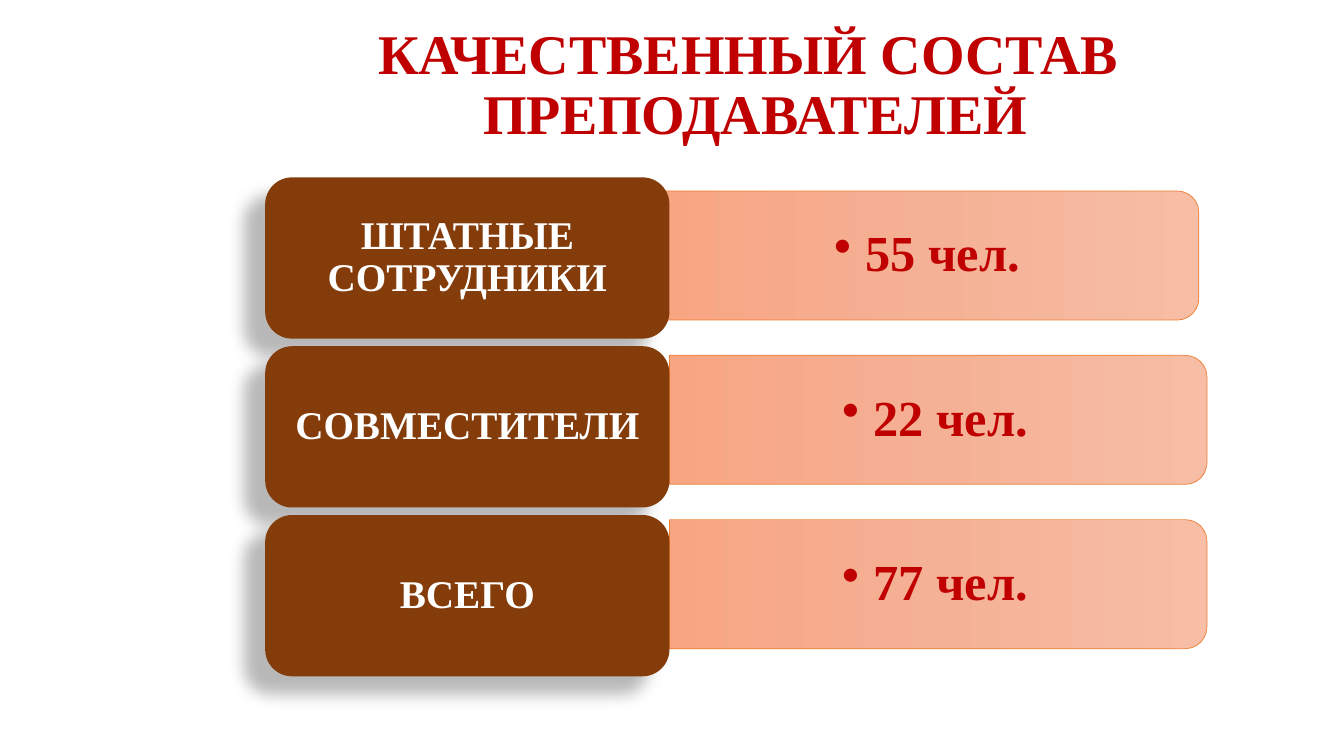
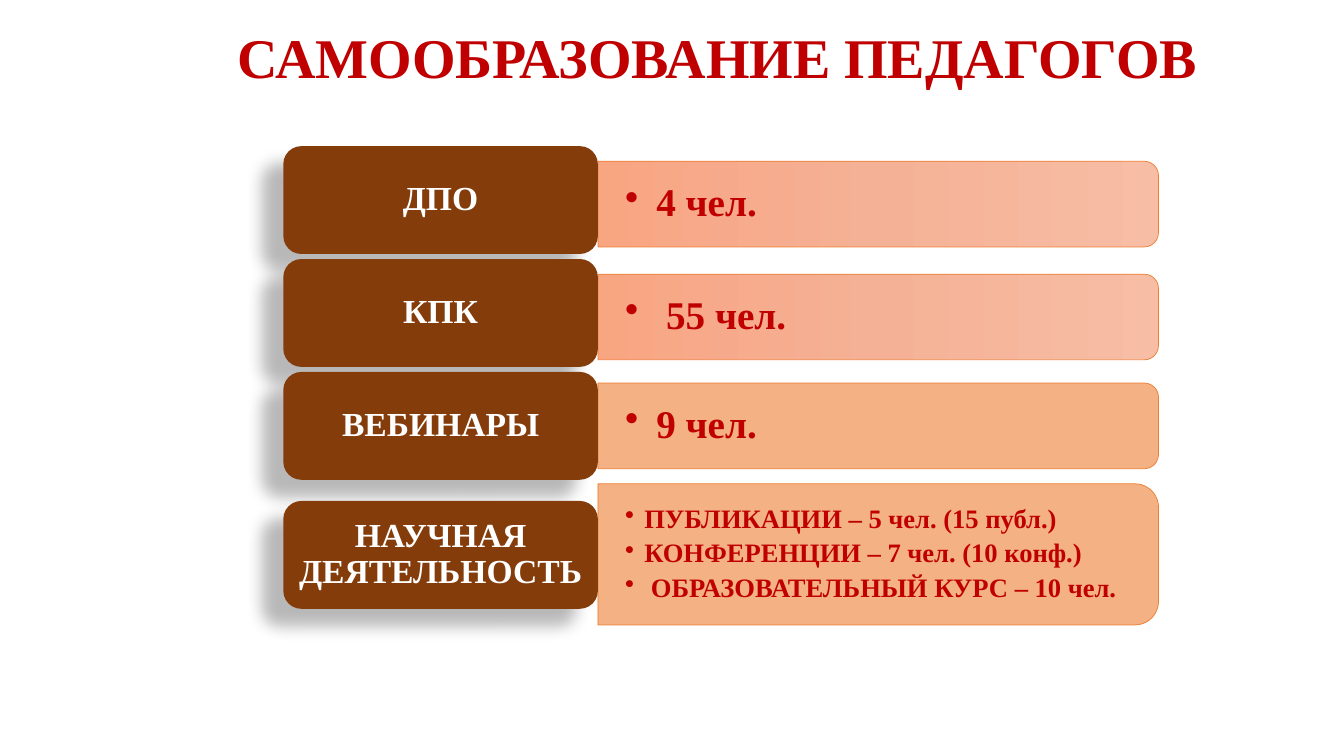
from dataclasses import dataclass

from lxml import etree
from pptx import Presentation
from pptx.dml.color import RGBColor
from pptx.enum.shapes import MSO_SHAPE
from pptx.enum.text import MSO_ANCHOR, MSO_AUTO_SIZE, PP_ALIGN
from pptx.oxml.ns import qn
from pptx.util import Inches, Pt

LEFT, CENTER = PP_ALIGN.LEFT, PP_ALIGN.CENTER
MIDDLE = MSO_ANCHOR.MIDDLE
NO_AUTOFIT = MSO_AUTO_SIZE.NONE
LABEL_SHAPE = MSO_SHAPE.ROUNDED_RECTANGLE
BAR_SHAPE = MSO_SHAPE.ROUND_2_SAME_RECTANGLE
TITLE_ONLY = 5


@dataclass(frozen=True)
class Theme:
    font: str = "Times New Roman"
    accent: str = "C00000"
    label: str = "843C0B"
    label_text: str = "FFFFFF"
    bar: str = "F4B183"
    bar_line: str = "ED7D31"
    bar_gradient: tuple = ((0, "F7BDA5"), (50, "F5B196"), (100, "F8A582"))
    title_size: int = 40
    line_spacing: float = 0.9
    bullet_gap: float = 4


THEME = Theme()

SLIDES = [
    {
        "title": "КАЧЕСТВЕННЫЙ СОСТАВ \vПРЕПОДАВАТЕЛЕЙ",
        "title_box": (1.49, 0.23, 12, 1.25),
        "title_align": CENTER,
        "label_box": (2.63, 4.01, 1.6),
        "label_size": 28,
        "bar_width": 5.33,
        "bar_align": CENTER,
        "rows": [
            {"label": "ШТАТНЫЕ СОТРУДНИКИ", "lines": ["55 чел."], "overlap": 0.08},
            {"label": "СОВМЕСТИТЕЛИ", "lines": ["22 чел."]},
            {"label": "ВСЕГО", "lines": ["77 чел."]},
        ],
        "row_defaults": {"size": 36, "indent": 0.31, "height": 1.28, "gradient": True, "overlap": 0},
        "label_tops": [1.76 + 1.675 * row for row in range(3)],
        "bar_tops": [1.895 + 1.63 * row for row in range(3)],
    },
    {
        "title": "САМООБРАЗОВАНИЕ ПЕДАГОГОВ",
        "title_box": (2.26, -0.13, 11.5, 1.45),
        "title_align": LEFT,
        "label_box": (2.81, 3.12, 1.07),
        "label_size": 24,
        "bar_width": 5.56,
        "bar_align": LEFT,
        "rows": [
            {"label": "ДПО", "lines": ["4 чел."]},
            {"label": "КПК", "lines": [" 55 чел."]},
            {"label": "ВЕБИНАРЫ", "lines": ["9 чел."], "gradient": False},
            {
                "label": "НАУЧНАЯ ДЕЯТЕЛЬНОСТЬ",
                "lines": [
                    "ПУБЛИКАЦИИ – 5 чел. (15 публ.)",
                    "КОНФЕРЕНЦИИ – 7 чел. (10 конф.)",
                    " ОБРАЗОВАТЕЛЬНЫЙ КУРС – 10 чел.",
                ],
                "size": 19, "indent": 0.19, "height": 1.4, "gradient": False,
            },
        ],
        "row_defaults": {"size": 28, "indent": 0.31, "height": 0.85, "gradient": True, "overlap": 0},
        "label_tops": [1.45, 2.57, 3.69, 4.97],
        "bar_tops": [1.6, 2.72, 3.8, 4.8],
    },
]


def color(value):
    return RGBColor.from_string(value)


def add_element(parent, tag, **attributes):
    values = {name: str(value) for name, value in attributes.items()}
    return etree.SubElement(parent, qn(tag), values)


def format_text(text_frame, size, text_color, align, margins=(0.1, 0.05)):
    text_frame.word_wrap = True
    text_frame.auto_size = NO_AUTOFIT
    text_frame.vertical_anchor = MIDDLE
    text_frame.margin_left = text_frame.margin_right = Inches(margins[0])
    text_frame.margin_top = text_frame.margin_bottom = Inches(margins[1])
    for paragraph in text_frame.paragraphs:
        paragraph.alignment = align
        paragraph.line_spacing = THEME.line_spacing
        for run in paragraph.runs:
            run.font.name = THEME.font
            run.font.size = Pt(size)
            run.font.bold = True
            run.font.color.rgb = color(text_color)


def set_title(slide, content):
    title = slide.shapes.title
    title.left, title.top, title.width, title.height = map(Inches, content["title_box"])
    title.text_frame.text = content["title"]
    format_text(title.text_frame, THEME.title_size, THEME.accent, content["title_align"])


def set_bar_gradient(shape):
    shape.fill.gradient()
    shape.fill.gradient_angle = 270
    stops = shape._element.spPr.find(qn("a:gradFill")).find(qn("a:gsLst"))
    for stop in list(stops):
        stops.remove(stop)
    for position, value in THEME.bar_gradient:
        stop = add_element(stops, "a:gs", pos=position * 1000)
        add_element(stop, "a:srgbClr", val=value)


def add_bar(slide, left, top, width, row):
    height = row["height"]
    bar = slide.shapes.add_shape(
        BAR_SHAPE,
        Inches(left + (width - height) / 2), Inches(top + (height - width) / 2),
        Inches(height), Inches(width),
    )
    bar.rotation = 90
    bar.shadow.inherit = False
    if row["gradient"]:
        set_bar_gradient(bar)
    else:
        bar.fill.solid()
        bar.fill.fore_color.rgb = color(THEME.bar)
    bar.line.color.rgb = color(THEME.bar_line)
    bar.line.width = Pt(0.5)


def add_bullets(slide, left, top, width, row, align):
    box = slide.shapes.add_textbox(*map(Inches, (left, top, width - 0.06, row["height"])))
    text_frame = box.text_frame
    text_frame.text = "\n".join(row["lines"])
    indent = Inches(row["indent"])
    for index, paragraph in enumerate(text_frame.paragraphs):
        properties = paragraph._p.get_or_add_pPr()
        properties.set("marL", str(indent))
        properties.set("indent", str(-indent))
        add_element(properties, "a:buChar", char="•")
        if index:
            paragraph.space_before = Pt(THEME.bullet_gap)
    format_text(text_frame, row["size"], THEME.accent, align, (0.27, 0.14))


def add_label(slide, left, top, width, height, text, size):
    label = slide.shapes.add_shape(LABEL_SHAPE, *map(Inches, (left, top, width, height)))
    label.fill.solid()
    label.fill.fore_color.rgb = color(THEME.label)
    label.line.fill.background()
    label.shadow.inherit = False
    effects = label._element.spPr.find(qn("a:effectLst"))
    shadow = add_element(
        effects, "a:outerShdw", blurRad=Pt(11.8), dist=Pt(19.7), dir=141 * 60000, rotWithShape=0
    )
    shadow_color = add_element(shadow, "a:srgbClr", val="000000")
    add_element(shadow_color, "a:alpha", val=28000)
    label.text_frame.text = text
    format_text(label.text_frame, size, THEME.label_text, CENTER, (0.06, 0.05))


def build_slide(presentation, content):
    slide = presentation.slides.add_slide(presentation.slide_layouts[TITLE_ONLY])
    set_title(slide, content)
    label_left, label_width, label_height = content["label_box"]
    bar_width = content["bar_width"]
    for entry, label_top, bar_top in zip(content["rows"], content["label_tops"], content["bar_tops"]):
        row = {**content["row_defaults"], **entry}
        bar_left = label_left + label_width - row["overlap"]
        add_bar(slide, bar_left, bar_top, bar_width, row)
        add_bullets(slide, bar_left, bar_top, bar_width, row, content["bar_align"])
        add_label(
            slide, label_left, label_top, label_width, label_height,
            row["label"], content["label_size"],
        )


def main():
    presentation = Presentation()
    presentation.slide_width = Inches(13.33)
    presentation.slide_height = Inches(7.5)
    for content in SLIDES:
        build_slide(presentation, content)
    presentation.save("out.pptx")


if __name__ == "__main__":
    main()
